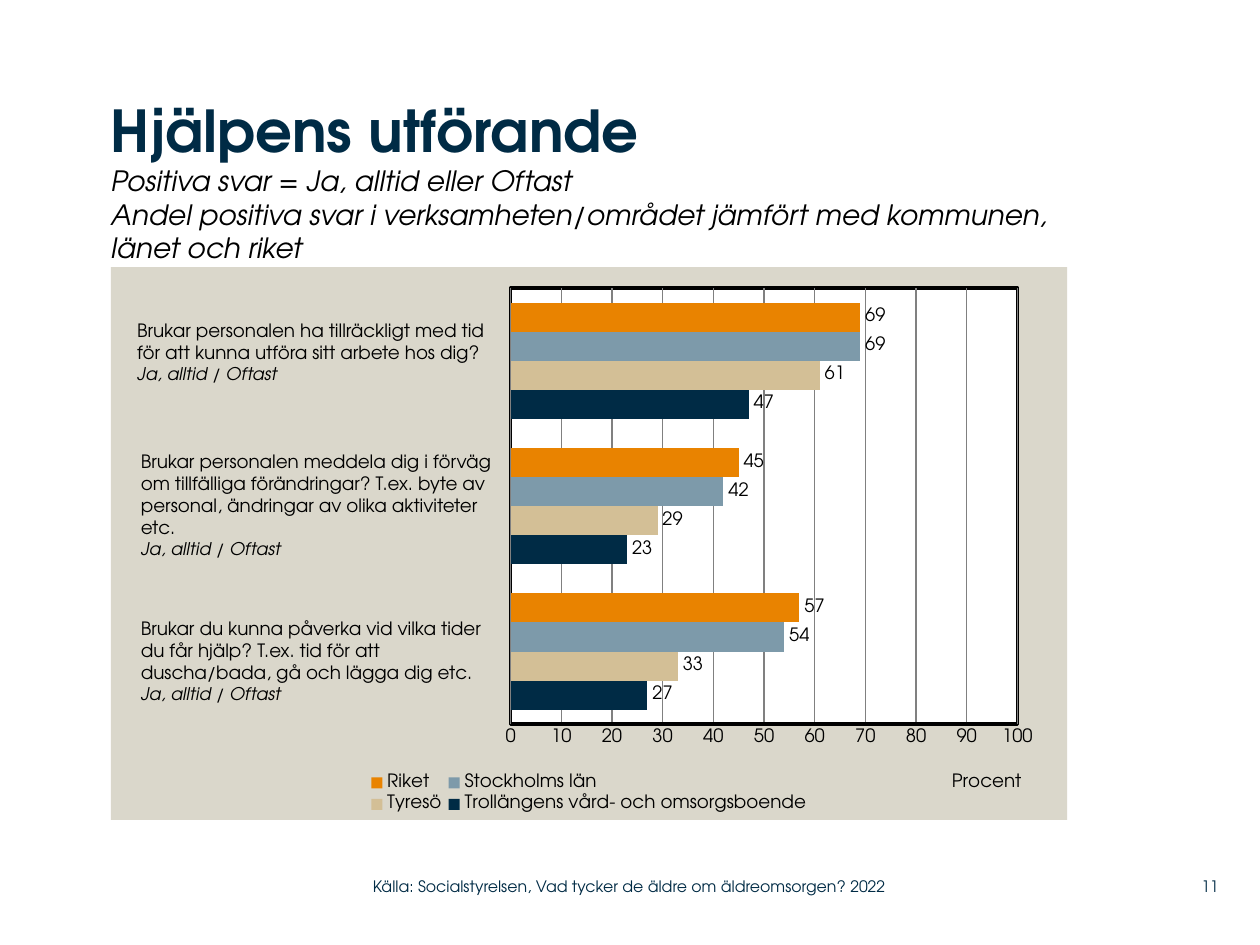
from lxml.etree import SubElement
from pptx import Presentation
from pptx.chart.data import CategoryChartData
from pptx.dml.color import RGBColor
from pptx.enum.chart import XL_CHART_TYPE as ChartType, XL_LABEL_POSITION as LabelPosition
from pptx.enum.chart import XL_LEGEND_POSITION as LegendPosition, XL_TICK_MARK as TickMark
from pptx.enum.text import MSO_ANCHOR as Anchor, PP_ALIGN as Align
from pptx.oxml import parse_xml
from pptx.oxml.ns import nsdecls, qn
from pptx.util import Pt

NAVY = RGBColor(0x00, 0x2B, 0x45)
SAND = RGBColor(0xD3, 0xBF, 0x96)
STEEL = RGBColor(0x7D, 0x9A, 0xAA)
ORANGE = RGBColor(0xE9, 0x83, 0x00)
STONE = RGBColor(0xDA, 0xD7, 0xCB)
WHITE = RGBColor(0xFF, 0xFF, 0xFF)
GRAY = RGBColor(0x80, 0x80, 0x80)
BLACK = RGBColor(0x00, 0x00, 0x00)

HEADING = {"size": Pt(33), "bold": True, "color": NAVY}
SUBHEADING = {"size": Pt(16), "italic": True}
QUESTION = {"size": Pt(10.5)}
ANSWER = {"size": Pt(10), "italic": True}
FOOTER = {"size": Pt(9), "color": NAVY}
CHART_TEXT = {"size": Pt(10.5), "bold": False}

SERIES = [
    ("Trollängens vård- och omsorgsboende", (27, 23, 47), NAVY),
    ("Tyresö", (33, 29, 61), SAND),
    ("Stockholms län", (54, 42, 69), STEEL),
    ("Riket", (57, 45, 69), ORANGE),
]

QUESTIONS = [
    (71.3, 178.6, ["Brukar personalen ha tillräckligt med tid",
                   "för att kunna utföra sitt arbete hos dig?"]),
    (73.4, 253.8, ["Brukar personalen meddela dig i förväg om tillfälliga förändringar? "
                   "T.ex. byte av personal, ändringar av olika aktiviteter etc."]),
    (73.4, 349.2, ["Brukar du kunna påverka vid vilka tider",
                   "du får hjälp? T.ex. tid för att",
                   "duscha/bada, gå och lägga dig etc."]),
]


class SlideBuilder:
    font_name = "TeX Gyre Adventor"

    def __init__(self, slide):
        self.slide = slide

    def style(self, font, formats):
        values = {"name": self.font_name, "color": BLACK, **formats}
        font.color.rgb = values.pop("color")
        for name, value in values.items():
            setattr(font, name, value)

    def text(self, left, top, width, height, lines, inset=True,
             anchor=Anchor.TOP, align=Align.LEFT):
        """Add a text box; each line is a (text, format) pair."""
        box = self.slide.shapes.add_textbox(Pt(left), Pt(top), Pt(width), Pt(height))
        frame = box.text_frame
        frame.word_wrap = True
        frame.vertical_anchor = anchor
        if not inset:
            for side in ("left", "top", "right", "bottom"):
                setattr(frame, f"margin_{side}", 0)
        for index, (text, formats) in enumerate(lines):
            paragraph = frame.add_paragraph() if index else frame.paragraphs[0]
            paragraph.alignment = align
            run = paragraph.add_run()
            run.text = text
            self.style(run.font, formats)

    def bar_chart(self, left, top, width, height, series):
        data = CategoryChartData()
        data.categories = ["1", "2", "3"]
        for name, values, _ in series:
            data.add_series(name, values)
        chart = self.slide.shapes.add_chart(
            ChartType.BAR_CLUSTERED, Pt(left), Pt(top), Pt(width), Pt(height), data).chart
        chart.has_title = False
        self.style(chart.font, CHART_TEXT)
        plot = chart.plots[0]
        plot.gap_width = 100
        plot.overlap = 0
        plot.vary_by_categories = False
        for bars, (_, _, color) in zip(plot.series, series):
            bars.format.fill.solid()
            bars.format.fill.fore_color.rgb = color
            labels = bars.data_labels
            labels.show_value = True
            labels.position = LabelPosition.OUTSIDE_END
            self.style(labels.font, CHART_TEXT)
        self.value_axis(chart)
        self.legend(chart)

        chart_space = chart.plots[0]._element.getroottree().getroot()
        plot_area = chart_space.find(".//" + qn("c:plotArea"))
        place(plot_area, 0, 0.418, 0.038, 0.53, 0.789, inner=True)
        plot_area.append(area_format(WHITE, BLACK))
        chart_space.find(qn("c:chart")).addnext(area_format(STONE))

    def value_axis(self, chart):
        chart.category_axis.visible = False
        axis = chart.value_axis
        axis.minimum_scale, axis.maximum_scale, axis.major_unit = 0, 100, 10
        axis.major_tick_mark = axis.minor_tick_mark = TickMark.NONE
        axis.has_major_gridlines = True
        for line, color, weight in ((axis.major_gridlines.format.line, GRAY, 0.75),
                                    (axis.format.line, BLACK, 2)):
            line.color.rgb = color
            line.width = Pt(weight)
        self.style(axis.tick_labels.font, CHART_TEXT)
        run = axis.axis_title.text_frame.paragraphs[0].add_run()
        run.text = "Procent"
        self.style(run.font, CHART_TEXT)
        place(axis.axis_title._element, 1, 0.876, 0.908)

    def legend(self, chart):
        chart.has_legend = True
        chart.legend.position = LegendPosition.BOTTOM
        chart.legend.include_in_layout = False
        self.style(chart.legend.font, CHART_TEXT)
        place(chart.legend._element, 1, 0.265, 0.91, 0.47, 0.085)


def place(element, index, x, y, width=None, height=None, inner=False):
    """Give a chart part a manual layout, in fractions of the chart."""
    for old in element.findall(qn("c:layout")):
        element.remove(old)
    layout = parse_xml(f"<c:layout {nsdecls('c')}><c:manualLayout/></c:layout>")
    settings = {"layoutTarget": "inner" if inner else None, "xMode": "edge",
                "yMode": "edge", "x": x, "y": y, "w": width, "h": height}
    for name, value in settings.items():
        if value is not None:
            SubElement(layout[0], qn(f"c:{name}")).set("val", str(value))
    element.insert(index, layout)


def area_format(fill, line=None):
    solid = '<a:solidFill><a:srgbClr val="{}"/></a:solidFill>'
    outline = solid.format(line) if line is not None else "<a:noFill/>"
    return parse_xml(f"<c:spPr {nsdecls('c', 'a')}>{solid.format(fill)}"
                     f'<a:ln w="{Pt(2)}">{outline}</a:ln></c:spPr>')


def main():
    presentation = Presentation()
    presentation.slide_width, presentation.slide_height = Pt(720), Pt(540)
    builder = SlideBuilder(presentation.slides.add_slide(presentation.slide_layouts[6]))

    builder.text(63.4, 54, 561, 87, [
        ("Hjälpens utförande", HEADING),
        ("Positiva svar = Ja, alltid eller Oftast", SUBHEADING),
        ("Andel positiva svar i verksamheten/området jämfört med kommunen, "
         "länet och riket", SUBHEADING),
    ], inset=False)
    builder.bar_chart(63.4, 152.6, 546.4, 316, SERIES)
    for left, top, question in QUESTIONS:
        lines = [(line, QUESTION) for line in question]
        builder.text(left, top, 215, 58, lines + [("Ja, alltid / Oftast", ANSWER)])
    builder.text(213.1, 496, 319, 21, [
        ("Källa: Socialstyrelsen, Vad tycker de äldre om äldreomsorgen? 2022", FOOTER),
    ], inset=False, anchor=Anchor.MIDDLE)
    builder.text(662.4, 496, 34, 21, [("11", FOOTER)],
                 inset=False, anchor=Anchor.MIDDLE, align=Align.RIGHT)
    presentation.save("out.pptx")


if __name__ == "__main__":
    main()
